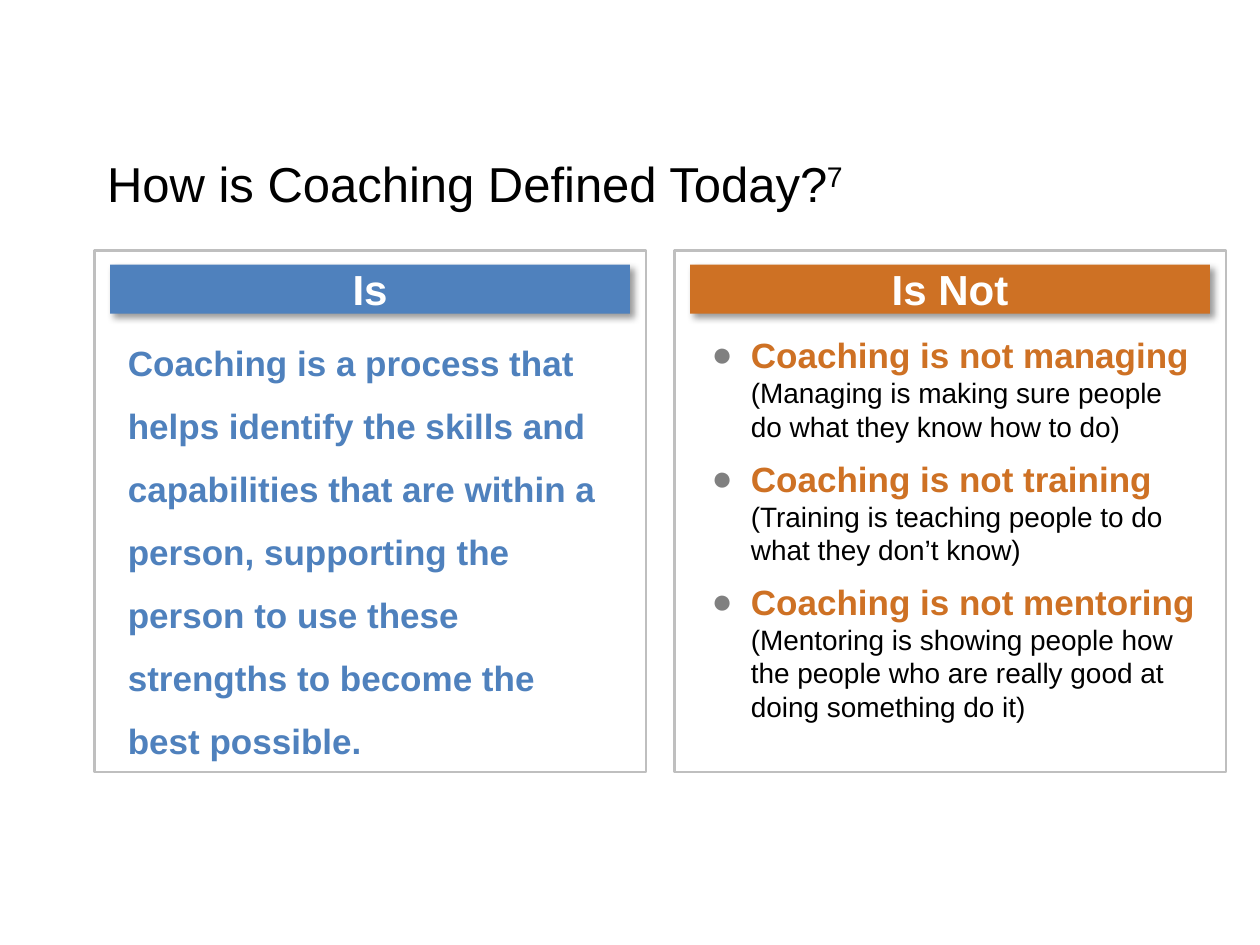
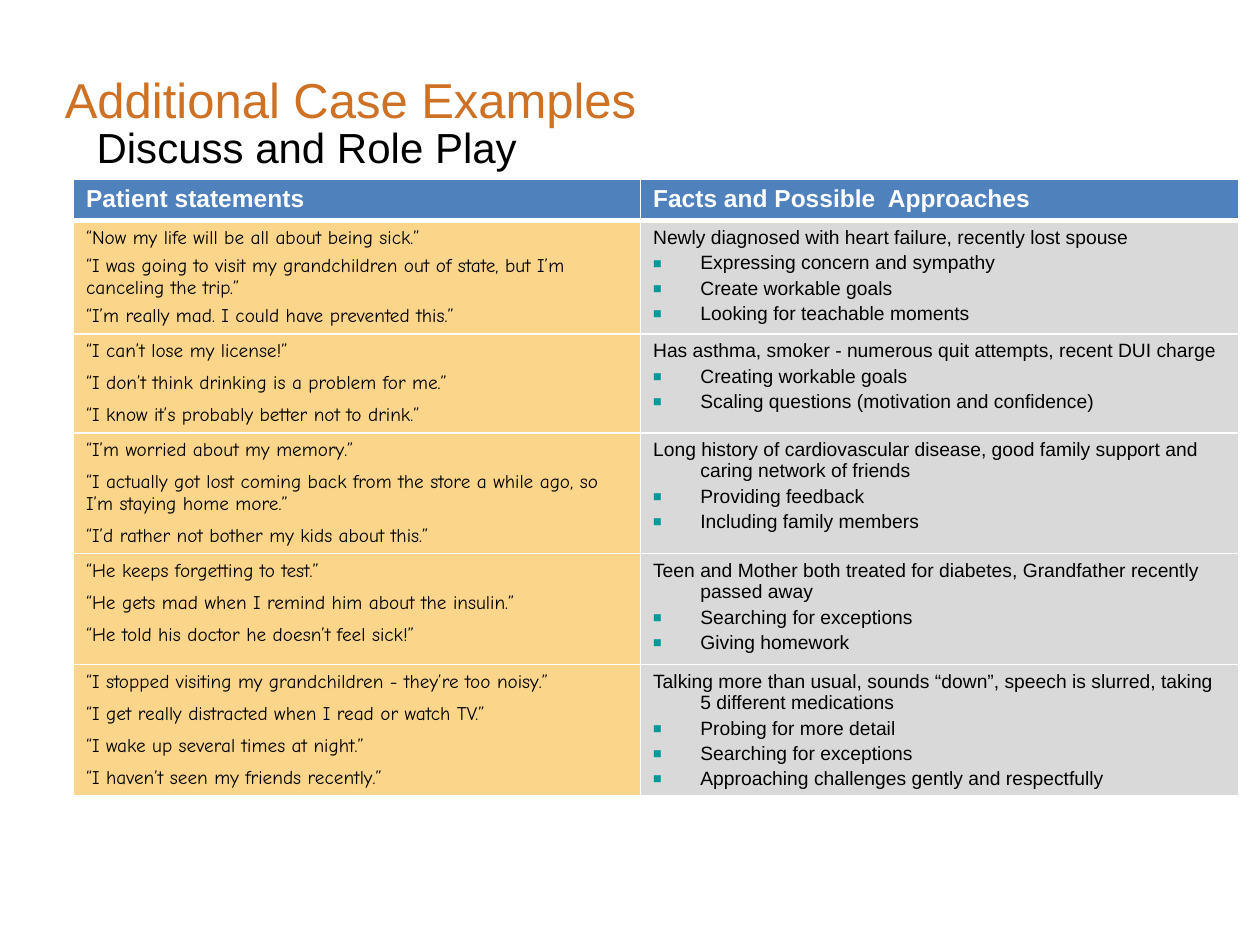
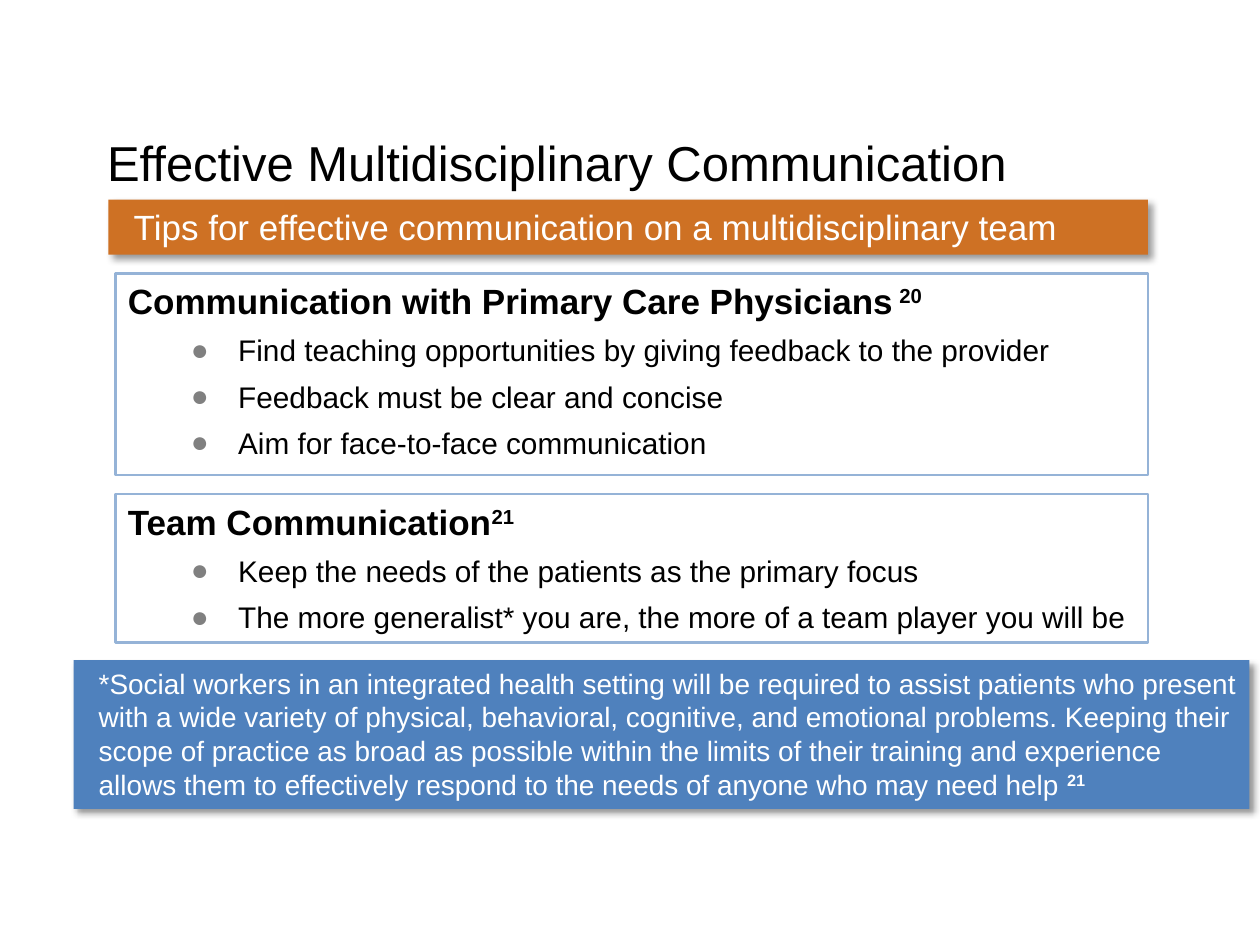
from dataclasses import dataclass
from typing import Any, Optional, Sequence

from lxml.etree import SubElement
from pptx import Presentation
from pptx.dml.color import RGBColor
from pptx.enum.shapes import MSO_SHAPE
from pptx.enum.text import MSO_ANCHOR, MSO_AUTO_SIZE, PP_ALIGN
from pptx.oxml.ns import qn
from pptx.util import Pt


# Theme
@dataclass(frozen=True)
class Theme:
    font: str = "Arial"
    speech_font: str = "Comic Neue"
    black: str = "000000"
    white: str = "FFFFFF"
    blue: str = "4F81BD"
    light_blue: str = "95B3D7"
    orange: str = "CE7124"
    teal: str = "009999"
    sand: str = "FAD58A"
    pale_gray: str = "D9D9D9"
    frame_gray: str = "BFBFBF"
    bullet_gray: str = "808080"
    title: int = 28
    banner: int = 24
    lead: int = 20
    point: int = 17
    detail: int = 16
    table_head: int = 14
    table_body: int = 11


THEME = Theme()


# Building blocks
@dataclass(frozen=True)
class Span:
    text: str
    size: int
    color: str = THEME.black
    bold: bool = False
    font: str = THEME.font
    superscript: bool = False
    break_after: bool = False


@dataclass(frozen=True)
class Bullet:
    symbol: str
    color: str
    percent: int = 100


@dataclass(frozen=True)
class Para:
    spans: Sequence[Span]
    bullet: Optional[Bullet] = None
    margin: float = 0
    hanging: float = 0
    before: float = 0
    line_spacing: Optional[float] = None
    align: PP_ALIGN = PP_ALIGN.LEFT


@dataclass(frozen=True)
class Box:
    left: float
    top: float
    width: float
    height: float
    paras: Sequence[Para] = ()
    fill: Optional[str] = None
    border: Optional[str] = None
    inset_left: float = 7.2
    inset_top: float = 3.6
    anchor: MSO_ANCHOR = MSO_ANCHOR.TOP
    grow: bool = False


@dataclass(frozen=True)
class CaseExample:
    statements: Sequence[str]
    facts: str
    approaches: Sequence[str]
    height: float
    gap: float = 5.5


DOT = Bullet("●", THEME.bullet_gray)
SQUARE = Bullet("■", THEME.teal, 75)


def apply_format(target: Any, values: dict[str, Any]) -> None:
    for name, value in values.items():
        setattr(target, name, value)


def add_xml(parent: Any, tag: str, **attributes: Any) -> Any:
    return SubElement(parent, qn(tag), {k: str(v) for k, v in attributes.items()})


def add_bullet(paragraph: Any, bullet: Bullet) -> None:
    properties = paragraph._p.get_or_add_pPr()
    add_xml(add_xml(properties, "a:buClr"), "a:srgbClr", val=bullet.color)
    add_xml(properties, "a:buSzPct", val=bullet.percent * 1000)
    add_xml(properties, "a:buFont", typeface=THEME.font)
    add_xml(properties, "a:buChar", char=bullet.symbol)


def write_paras(frame: Any, paras: Sequence[Para]) -> None:
    for index, para in enumerate(paras):
        paragraph = frame.paragraphs[0] if index == 0 else frame.add_paragraph()
        properties = paragraph._p.get_or_add_pPr()
        properties.set("marL", str(Pt(para.margin)))
        properties.set("indent", str(Pt(-para.hanging)))
        if para.bullet:
            add_bullet(paragraph, para.bullet)
        apply_format(paragraph, {
            "alignment": para.align,
            "space_before": Pt(para.before if index else 0),
            "line_spacing": para.line_spacing,
        })
        for span in para.spans:
            run = paragraph.add_run()
            run.text = span.text
            apply_format(run.font, {
                "size": Pt(span.size), "name": span.font, "bold": span.bold})
            run.font.color.rgb = RGBColor.from_string(span.color)
            if span.superscript:
                run.font._element.set("baseline", "30000")
            if span.break_after:
                paragraph.add_line_break()


def add_shadow(shape: Any) -> None:
    effects = shape._element.spPr.find(qn("a:effectLst"))
    shadow = add_xml(effects, "a:outerShdw", blurRad=Pt(4), dist=Pt(3),
                     dir=45 * 60000, algn="tl", rotWithShape=0)
    color = add_xml(shadow, "a:srgbClr", val=THEME.black)
    add_xml(color, "a:alpha", val=40000)


def draw_box(slide: Any, box: Box) -> None:
    place = [Pt(v) for v in (box.left, box.top, box.width, box.height)]
    if box.fill or box.border:
        shape = slide.shapes.add_shape(MSO_SHAPE.RECTANGLE, *place)
        shape.shadow.inherit = False
        if box.fill:
            shape.fill.solid()
            shape.fill.fore_color.rgb = RGBColor.from_string(box.fill)
            add_shadow(shape)
        else:
            shape.fill.background()
        if box.border:
            shape.line.color.rgb = RGBColor.from_string(box.border)
            shape.line.width = Pt(1.5)
        else:
            shape.line.fill.background()
    else:
        shape = slide.shapes.add_textbox(*place)
    apply_format(shape.text_frame, {
        "word_wrap": True,
        "vertical_anchor": box.anchor,
        "margin_left": Pt(box.inset_left),
        "margin_top": Pt(box.inset_top),
        "auto_size": (MSO_AUTO_SIZE.SHAPE_TO_FIT_TEXT if box.grow
                      else MSO_AUTO_SIZE.NONE),
    })
    write_paras(shape.text_frame, box.paras)


def add_titled_slide(deck: Any, left: float, top: float,
                     spans: Sequence[Span]) -> Any:
    slide = deck.slides.add_slide(deck.slide_layouts[5])
    title = slide.shapes.title
    apply_format(title, {"left": Pt(left), "top": Pt(top),
                         "width": Pt(630), "height": Pt(66)})
    apply_format(title.text_frame, {
        "word_wrap": True, "vertical_anchor": MSO_ANCHOR.TOP,
        "auto_size": MSO_AUTO_SIZE.NONE})
    write_paras(title.text_frame, [Para(spans)])
    return slide


# Slide 1: what coaching is and is not
NOT_COACHING = [
    ("managing", "(Managing is making sure people do what they know how to do)"),
    ("training", "(Training is teaching people to do what they don’t know)"),
    ("mentoring", "(Mentoring is showing people how the people who are really "
                  "good at doing something do it)"),
]


def build_definition(deck: Any) -> None:
    slide = add_titled_slide(deck, 54, 84, [
        Span("How is Coaching Defined Today?", THEME.title),
        Span("7", THEME.title, superscript=True)])
    columns = [("Is", THEME.blue), ("Is Not", THEME.orange)]
    for index, (heading, color) in enumerate(columns):
        left = 54 + index * 331.4
        draw_box(slide, Box(left, 143.2, 315.2, 298, border=THEME.frame_gray))
        label = Span(heading, THEME.banner, THEME.white, bold=True)
        draw_box(slide, Box(left + 9, 151.2, 297, 28,
                            [Para([label], align=PP_ALIGN.CENTER)],
                            fill=color, anchor=MSO_ANCHOR.MIDDLE))
    definition = Span(
        "Coaching is a process that helps identify the skills and capabilities "
        "that are within a person, supporting the person to use these strengths "
        "to become the best possible.", THEME.lead, THEME.blue, bold=True)
    draw_box(slide, Box(66, 175.7, 288, 265.7, [Para([definition], line_spacing=1.5)],
                        inset_top=7.2, grow=True))
    contrasts = [
        Para([Span(f"Coaching is not {role}", THEME.lead, THEME.orange,
                   bold=True, break_after=True),
              Span(meaning, THEME.detail)],
             DOT, margin=41, hanging=22.5, before=8)
        for role, meaning in NOT_COACHING]
    draw_box(slide, Box(381, 183.6, 312, 235.4, contrasts, inset_top=7.2, grow=True))


# Slide 2: case examples
CASES = [
    CaseExample(
        ["“Now my life will be all about being sick.”",
         "“I was going to visit my grandchildren out of state, but I’m canceling "
         "the trip.”",
         "“I’m really mad. I could have prevented this.”"],
        "Newly diagnosed with heart failure, recently lost spouse",
        ["Expressing concern and sympathy", "Create workable goals",
         "Looking for teachable moments"], 61.2, gap=3.3),
    CaseExample(
        ["“I can’t lose my license!”",
         "“I don’t think drinking is a problem for me.”",
         "“I know it’s probably better not to drink.”"],
        "Has asthma, smoker - numerous quit attempts, recent DUI charge",
        ["Creating workable goals", "Scaling questions (motivation and confidence)"],
        52.5),
    CaseExample(
        ["“I’m worried about my memory.”",
         "“I actually got lost coming back from the store a while ago, so I’m "
         "staying home more.”",
         "“I’d rather not bother my kids about this.”"],
        "Long history of cardiovascular disease, good family support and caring "
        "network of friends",
        ["Providing feedback", "Including family members"], 64.8),
    CaseExample(
        ["“He keeps forgetting to test.”",
         "“He gets mad when I remind him about the insulin.”",
         "“He told his doctor he doesn’t feel sick!”"],
        "Teen and Mother both treated for diabetes, Grandfather recently passed away",
        ["Searching for exceptions", "Giving homework"], 63.4),
    CaseExample(
        ["“I stopped visiting my grandchildren - they’re too noisy.”",
         "“I get really distracted when I read or watch TV.”",
         "“I wake up several times at night.”",
         "“I haven’t seen my friends recently.”"],
        "Talking more than usual, sounds “down”, speech is slurred, taking 5 "
        "different medications",
        ["Probing for more detail", "Searching for exceptions",
         "Approaching challenges gently and respectfully"], 74.2),
]


def fill_cell(cell: Any, paras: Sequence[Para], color: str,
              top_line: float = 1, bottom_line: float = 1) -> None:
    properties = cell._tc.get_or_add_tcPr()
    widths = {"a:lnL": 1, "a:lnR": 1, "a:lnT": top_line, "a:lnB": bottom_line}
    for tag, width in widths.items():
        line = add_xml(properties, tag, w=Pt(width))
        add_xml(add_xml(line, "a:solidFill"), "a:srgbClr", val=THEME.white)
    cell.fill.solid()
    cell.fill.fore_color.rgb = RGBColor.from_string(color)
    write_paras(cell.text_frame, paras)


def build_cases(deck: Any) -> None:
    slide = add_titled_slide(deck, 48, 66,
                             [Span("Discuss and Role Play", THEME.banner)])
    heading = Span("Additional Case Examples", THEME.title, THEME.orange)
    draw_box(slide, Box(30, 36, 630, 66, [Para([heading])]))

    heights = [24, *(case.height for case in CASES)]
    table = slide.shapes.add_table(len(heights), 2, Pt(42), Pt(102.2),
                                   Pt(666), Pt(sum(heights))).table
    table.horz_banding = False
    for column, width in zip(table.columns, (324, 342)):
        column.width = Pt(width)
    for row, height in zip(table.rows, heights):
        row.height = Pt(height)

    for index, text in enumerate(("Patient statements",
                                  "Facts and Possible  Approaches")):
        label = Span(text, THEME.table_head, THEME.white, bold=True)
        fill_cell(table.cell(0, index), [Para([label])], THEME.blue, bottom_line=3)
    for row, case in enumerate(CASES, start=1):
        top_line = 3 if row == 1 else 1
        statements = [
            Para([Span(text, THEME.table_body, font=THEME.speech_font)],
                 before=case.gap)
            for text in case.statements]
        fill_cell(table.cell(row, 0), statements, THEME.sand, top_line)
        notes = [
            Para([Span(text, THEME.table_body)], SQUARE if index else None,
                 margin=27, hanging=27, before=2.2)
            for index, text in enumerate([case.facts, *case.approaches])]
        fill_cell(table.cell(row, 1), notes, THEME.pale_gray, top_line)


# Slide 3: communication tips
TIPS = [
    (156.2, 115.2, "Communication with Primary Care Physicians", " 20",
     ["Find teaching opportunities by giving feedback to the provider",
      "Feedback must be clear and concise",
      "Aim for face-to-face communication"]),
    (282.2, 85, "Team Communication", "21",
     ["Keep the needs of the patients as the primary focus",
      "The more generalist* you are, the more of a team player you will be"]),
]


def build_communication(deck: Any) -> None:
    slide = add_titled_slide(deck, 54, 72, [
        Span("Effective Multidisciplinary Communication", THEME.title)])
    subtitle = Span("Tips for effective communication on a multidisciplinary team",
                    THEME.lead, THEME.white)
    draw_box(slide, Box(62, 114, 594, 31.5, [Para([subtitle])],
                        fill=THEME.orange, inset_left=14.4, grow=True))
    for top, height, heading, citation, tips in TIPS:
        paras = [Para([Span(heading, THEME.lead, bold=True),
                       Span(citation, THEME.lead, bold=True, superscript=True)])]
        paras += [Para([Span(tip, THEME.point)], DOT, margin=63, hanging=27, before=6)
                  for tip in tips]
        draw_box(slide, Box(66, top, 590, height, paras,
                            border=THEME.light_blue, grow=True))
    footnote = Span(
        "*Social workers in an integrated health setting will be required to assist "
        "patients who present with a wide variety of physical, behavioral, "
        "cognitive, and emotional problems. Keeping their scope of practice as "
        "broad as possible within the limits of their training and experience "
        "allows them to effectively respond to the needs of anyone who may need "
        "help ", THEME.detail, THEME.white)
    citation = Span("21", THEME.detail, THEME.white, bold=True, superscript=True)
    draw_box(slide, Box(42, 377.2, 672, 85, [Para([footnote, citation])],
                        fill=THEME.blue, inset_left=14.4, grow=True))


def main() -> None:
    deck = Presentation()
    apply_format(deck, {"slide_width": Pt(720), "slide_height": Pt(540)})
    build_definition(deck)
    build_cases(deck)
    build_communication(deck)
    deck.save("out.pptx")


if __name__ == "__main__":
    main()
